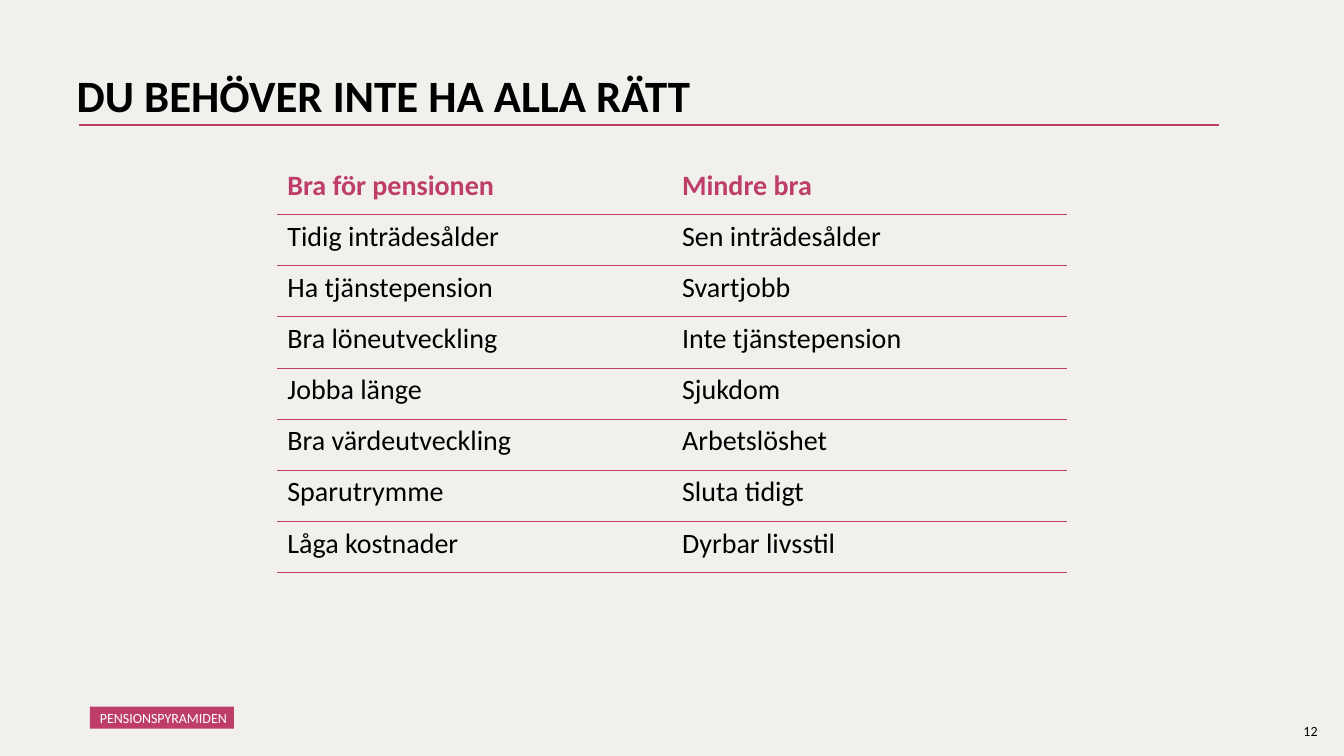
"""Build the pension slide that sets good choices against worse ones."""
from lxml import etree
from pptx import Presentation
from pptx.dml.color import RGBColor
from pptx.enum.shapes import MSO_CONNECTOR
from pptx.enum.text import MSO_ANCHOR, MSO_AUTO_SIZE, PP_ALIGN
from pptx.oxml.ns import qn
from pptx.util import Inches, Pt

STRAIGHT = MSO_CONNECTOR.STRAIGHT
TOP, MIDDLE = MSO_ANCHOR.TOP, MSO_ANCHOR.MIDDLE
LEFT = PP_ALIGN.LEFT
NO_AUTOFIT = MSO_AUTO_SIZE.NONE

FONT = "Calibri"
ROSE, BLACK, WHITE, PAPER = "BE3E69", "000000", "FFFFFF", "F1F0EC"

TITLE = "DU BEHÖVER INTE HA ALLA RÄTT"
TAG = "PENSIONSPYRAMIDEN"
PAGE = "12"
CHOICES = [
    ("Bra för pensionen", "Mindre bra"),
    ("Tidig inträdesålder", "Sen inträdesålder"),
    ("Ha tjänstepension", "Svartjobb"),
    ("Bra löneutveckling", "Inte tjänstepension"),
    ("Jobba länge", "Sjukdom"),
    ("Bra värdeutveckling", "Arbetslöshet"),
    ("Sparutrymme", "Sluta tidigt"),
    ("Låga kostnader", "Dyrbar livsstil"),
]
HEADER_RULE, ROW_RULE = 1, 0.5


def rgb(color):
    return RGBColor.from_string(color)


def box(left, top, width, height):
    return Inches(left), Inches(top), Inches(width), Inches(height)


def place(shape, *bounds):
    shape.left, shape.top, shape.width, shape.height = box(*bounds)


def write(frame, text, size, color, bold=False):
    paragraph = frame.paragraphs[0]
    paragraph.alignment = LEFT
    run = paragraph.add_run()
    run.text = text
    font = run.font
    font.name, font.size, font.bold = FONT, Pt(size), bold
    font.color.rgb = rgb(color)
    return paragraph


def border(cell, side, points):
    line = etree.SubElement(cell._tc.get_or_add_tcPr(), qn(f"a:ln{side}"))
    line.set("w", str(Pt(points)))
    if points:
        fill = etree.SubElement(line, qn("a:solidFill"))
        etree.SubElement(fill, qn("a:srgbClr")).set("val", ROSE)
    else:
        etree.SubElement(line, qn("a:noFill"))


def rule_below(row):
    if row < 0:
        return 0
    return HEADER_RULE if row == 0 else ROW_RULE


def add_choices(slide):
    frame = slide.shapes.add_table(
        len(CHOICES), len(CHOICES[0]), *box(2.75, 1.62, 7.83, 4.06))
    table = frame.table
    table.first_row = table.horz_banding = False
    for row, choice in enumerate(CHOICES):
        for column, text in enumerate(choice):
            cell = table.cell(row, column)
            header = row == 0
            write(cell.text_frame, text, 20, ROSE if header else BLACK, header)
            rules = {"L": 0, "R": 0, "T": rule_below(row - 1), "B": rule_below(row)}
            for side, points in rules.items():
                border(cell, side, points)
            cell.fill.background()


def add_title(slide):
    title = slide.shapes.title
    place(title, 0.66, 0.68, 11.5, 1.45)
    frame = title.text_frame
    frame.auto_size, frame.vertical_anchor = NO_AUTOFIT, TOP
    write(frame, TITLE, 32, BLACK, True).line_spacing = 0.9
    underline = slide.shapes.add_connector(
        STRAIGHT, Inches(0.78), Inches(1.24), Inches(12.09), Inches(1.24))
    underline.line.color.rgb = rgb(ROSE)
    underline.line.width = Pt(1.5)
    etree.SubElement(underline._element.spPr, qn("a:effectLst"))


def add_tag(slide):
    tag = slide.placeholders[1]
    place(tag, 0.89, 7.01, 1.43, 0.22)
    tag.fill.solid()
    tag.fill.fore_color.rgb = rgb(ROSE)
    frame = tag.text_frame
    frame.auto_size, frame.vertical_anchor = NO_AUTOFIT, MIDDLE
    frame.margin_left, frame.margin_top = Inches(0.1), Inches(0.08)
    frame.margin_right, frame.margin_bottom = Inches(0.04), Inches(0.05)
    properties = frame.paragraphs[0]._p.get_or_add_pPr()
    properties.set("marL", "0")
    properties.set("indent", "0")
    etree.SubElement(properties, qn("a:buNone"))
    paragraph = write(frame, TAG, 10, WHITE)
    paragraph.line_spacing, paragraph.space_before = 0.9, Pt(0)


def add_page_number(slide):
    page = slide.shapes.add_textbox(*box(12.83, 7.12, 0.4, 0.27))
    page.text_frame.word_wrap = True
    write(page.text_frame, PAGE, 10, BLACK)


def main():
    deck = Presentation()
    deck.slide_width, deck.slide_height = Inches(13.33), Inches(7.5)
    slide = deck.slides.add_slide(deck.slide_layouts[1])
    slide.background.fill.solid()
    slide.background.fill.fore_color.rgb = rgb(PAPER)
    add_title(slide)
    add_choices(slide)
    add_tag(slide)
    add_page_number(slide)
    deck.save("out.pptx")


if __name__ == "__main__":
    main()
